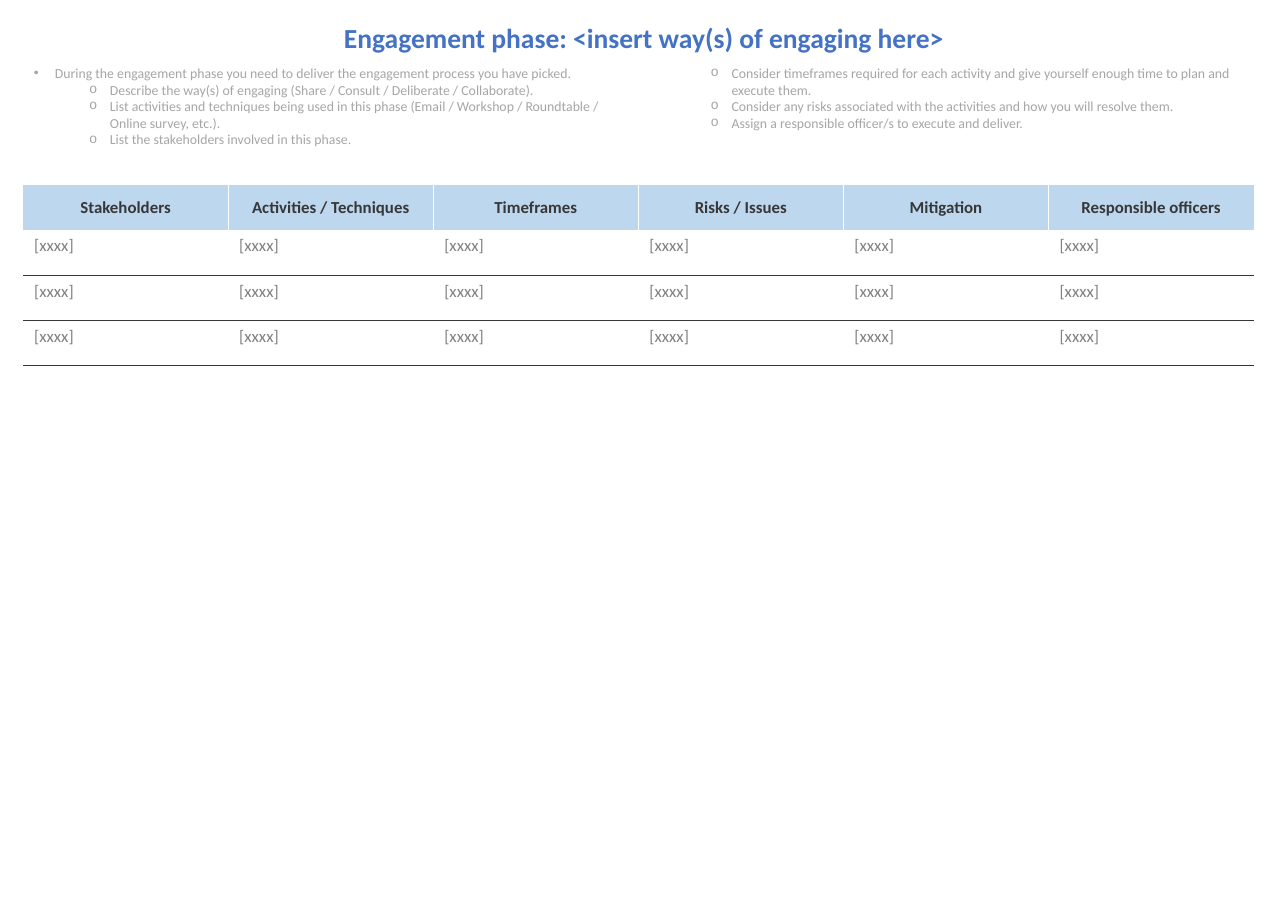
import pptx
import pptx.util
import pptx.dml.color
import pptx.enum.text
import pptx.oxml
import pptx.oxml.ns
from lxml import etree

Inches, Pt = pptx.util.Inches, pptx.util.Pt
ALIGN = pptx.enum.text.PP_ALIGN
ANCHOR = pptx.enum.text.MSO_ANCHOR
qn = pptx.oxml.ns.qn

WIDTH, HEIGHT = 11.69, 8.27
MARGIN = 0.21
CONTENT = 11.17
ROW = 0.41
BLUE, PALE, DARK, GREY, LIGHT = "4472C4", "BDD7EE", "373737", "808080", "A6A6A6"
NO_GRID_STYLE = "{2D5ABB26-0587-4C30-8999-92F81FD0307C}"

TITLE = "Engagement phase: <insert way(s) of engaging here>"
GUIDANCE = [
    (0, "During the engagement phase you need to deliver the engagement process you have picked."),
    (1, "Describe the way(s) of engaging (Share / Consult / Deliberate / Collaborate)."),
    (1, "List activities and techniques being used in this phase "
        "(Email / Workshop / Roundtable / Online survey, etc.)."),
    (1, "List the stakeholders involved in this phase."),
    (1, "Consider timeframes required for each activity and give yourself "
        "enough time to plan and execute them."),
    (1, "Consider any risks associated with the activities and how you will resolve them."),
    (1, "Assign a responsible officer/s to execute and deliver."),
]
HEADERS = ["Stakeholders", "Activities / Techniques", "Timeframes",
           "Risks / Issues", "Mitigation", "Responsible officers"]
BODY_ROWS = 3
BULLETS = [("•", "Arial", 0.19), ("o", "Courier New", 0.69)]  # mark, font, indent by level


def rgb(value):
    return pptx.dml.color.RGBColor.from_string(value)


def style(p, size, color, bold=False):
    f = p.font
    f.name, f.size, f.bold = "Calibri", Pt(size), bold
    f.color.rgb = rgb(color)


def place(sp, x, y, w, h):
    sp.left, sp.top, sp.width, sp.height = map(Inches, (x, y, w, h))


def add_title(s):
    sp = s.shapes.title
    place(sp, 0, 0.12, WIDTH, 0.43)
    tf = sp.text_frame
    tf.text = TITLE
    tf.vertical_anchor = ANCHOR.TOP
    tf.auto_size = pptx.enum.text.MSO_AUTO_SIZE.NONE
    p = tf.paragraphs[0]
    p.alignment = ALIGN.CENTER
    p.line_spacing, p.space_after = 1.07, Pt(8)
    style(p, 18, BLUE, True)


def set_bullet(p, level):
    mark, font, indent = BULLETS[level]
    p.level = level
    pPr = p._p.get_or_add_pPr()
    pPr.set("marL", str(Inches(indent)))
    pPr.set("indent", str(-Inches(0.19)))
    bullet_font = etree.Element(qn("a:buFont"), typeface=font)
    bullet_char = etree.Element(qn("a:buChar"), char=mark)
    pPr.insert(0, bullet_font)
    pPr.insert(1, bullet_char)


def add_guidance(s):
    sp = s.shapes.add_textbox(0, 0, 0, 0)
    place(sp, MARGIN, 0.54, CONTENT, 0.84)
    tf = sp.text_frame
    tf.word_wrap = True
    tf.margin_bottom = 0
    # Two text columns
    body = tf._txBody.bodyPr
    body.set("numCol", "2")
    body.set("spcCol", str(Inches(0.31)))
    for i, (level, text) in enumerate(GUIDANCE):
        p = tf.add_paragraph() if i else tf.paragraphs[0]
        p.text = text
        style(p, 9, LIGHT)
        set_bullet(p, level)


def add_border(cell, side, color):
    ln = etree.SubElement(cell._tc.get_or_add_tcPr(), qn("a:ln" + side), w=str(Pt(0.5)))
    fill = etree.SubElement(ln, qn("a:solidFill"))
    etree.SubElement(fill, qn("a:srgbClr"), val=color)


def fill_header(cell, text, sides):
    cell.text = text
    cell.vertical_anchor = ANCHOR.MIDDLE
    p = cell.text_frame.paragraphs[0]
    p.alignment = ALIGN.CENTER
    style(p, 11, DARK, True)
    for side in sides:
        add_border(cell, side, "FFFFFF")
    cell.fill.solid()
    cell.fill.fore_color.rgb = rgb(PALE)


def fill_body(cell, sides):
    cell.text = "[xxxx]"
    style(cell.text_frame.paragraphs[0], 11, GREY)
    for side in sides:
        add_border(cell, side, DARK)
    cell.fill.background()


def add_plan_table(s):
    rows, cols = BODY_ROWS + 1, len(HEADERS)
    frame = s.shapes.add_table(rows, cols, Inches(MARGIN), Inches(1.68),
                               Inches(CONTENT), Inches(ROW * rows))
    table = frame.table
    table.horz_banding = False
    table._tbl.tblPr.find(qn("a:tableStyleId")).text = NO_GRID_STYLE
    for row in table.rows:
        row.height = Inches(ROW)
    for c, header in enumerate(HEADERS):
        # White lines only between the header cells
        sides = ("L" if c else "") + ("R" if c < cols - 1 else "")
        fill_header(table.cell(0, c), header, sides)
        for r in range(1, rows):
            fill_body(table.cell(r, c), "B" if r == 1 else "TB")


def main():
    prs = pptx.Presentation()
    prs.slide_width, prs.slide_height = Inches(WIDTH), Inches(HEIGHT)
    s = prs.slides.add_slide(prs.slide_layouts[5])
    add_title(s)
    add_guidance(s)
    add_plan_table(s)
    prs.save("out.pptx")


if __name__ == "__main__":
    main()
